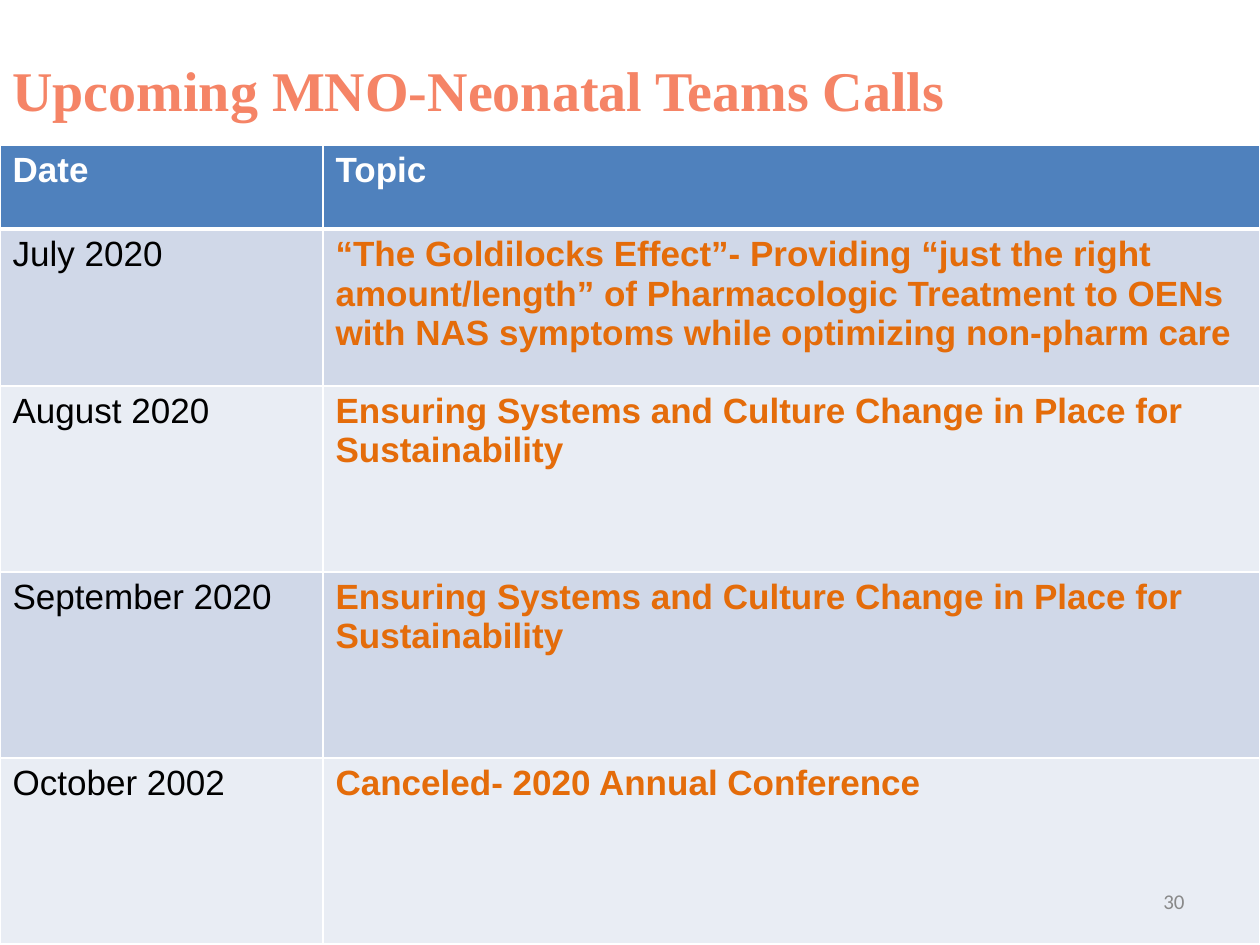
from lxml.etree import SubElement as Sub
from pptx import Presentation
from pptx.dml.color import RGBColor as RGB
from pptx.enum.text import MSO_ANCHOR as Anchor, PP_ALIGN as Align
from pptx.oxml.ns import qn
from pptx.util import Pt

PX = 914400 / 126
COL = {
    "title": "F58466", "head": "4F81BD", "odd": "D0D8E8", "even": "E9EDF4",
    "white": "FFFFFF", "black": "000000", "topic": "E46C0A", "page": "898989",
}


def px(n):
    return round(n * PX)


def style(par, face, size, color, bold=False):
    for run in par.runs:
        font = run.font
        font.name, font.size, font.bold = face, Pt(size), bold
        font.color.rgb = RGB.from_string(COL[color])


deck = Presentation()
deck.slide_width, deck.slide_height = px(1260), px(945)
slide = deck.slides.add_slide(deck.slide_layouts[6])
shapes = slide.shapes

# Title
box = shapes.add_textbox(px(0), px(10), px(998), px(158))
frame = box.text_frame
frame.word_wrap = True
frame.vertical_anchor = Anchor.MIDDLE
frame.text = "Upcoming MNO-Neonatal Teams Calls"
style(frame.paragraphs[0], "Times New Roman", 32, "title", True)

# Call schedule
change = "Ensuring Systems and Culture Change in Place for Sustainability"
calls = [
    ("Date", "Topic"),
    ("July 2020", "“The Goldilocks Effect”- Providing “just the right "
     "amount/length” of Pharmacologic Treatment to OENs with NAS symptoms "
     "while optimizing non-pharm care"),
    ("August 2020", change),
    ("September 2020", change),
    ("October 2002", "Canceled- 2020 Annual Conference"),
]
wide = [323, 937]
high = [84, 157, 186, 186, 186]
grid = shapes.add_table(len(calls), 2, px(0), px(145),
                        px(sum(wide)), px(sum(high))).table
for col, w in zip(grid.columns, wide):
    col.width = px(w)

for r, call in enumerate(calls):
    grid.rows[r].height = px(high[r])
    for c, text in enumerate(call):
        cell = grid.cell(r, c)
        cell.text = text
        if r == 0:
            fill, ink = "head", "white"
        else:
            fill = "odd" if r % 2 else "even"
            ink = "topic" if c else "black"
        style(cell.text_frame.paragraphs[0], "Arial", 20, ink, r == 0 or c == 1)

        # White borders, thicker under the header; lines precede the fill
        props = cell._tc.get_or_add_tcPr()
        for side in "LRTB":
            thick = (r, side) in [(0, "B"), (1, "T")]
            line = Sub(props, qn("a:ln" + side), w=str(Pt(3 if thick else 1)))
            paint = Sub(line, qn("a:solidFill"))
            Sub(paint, qn("a:srgbClr"), val=COL["white"])
        cell.fill.solid()
        cell.fill.fore_color.rgb = RGB.from_string(COL[fill])

# Page number
box = shapes.add_textbox(px(903), px(876), px(294), px(50))
frame = box.text_frame
frame.word_wrap = True
frame.vertical_anchor = Anchor.MIDDLE
frame.text = "30"
par = frame.paragraphs[0]
par.alignment = Align.RIGHT
style(par, "Calibri", 12, "page")

deck.save("out.pptx")
